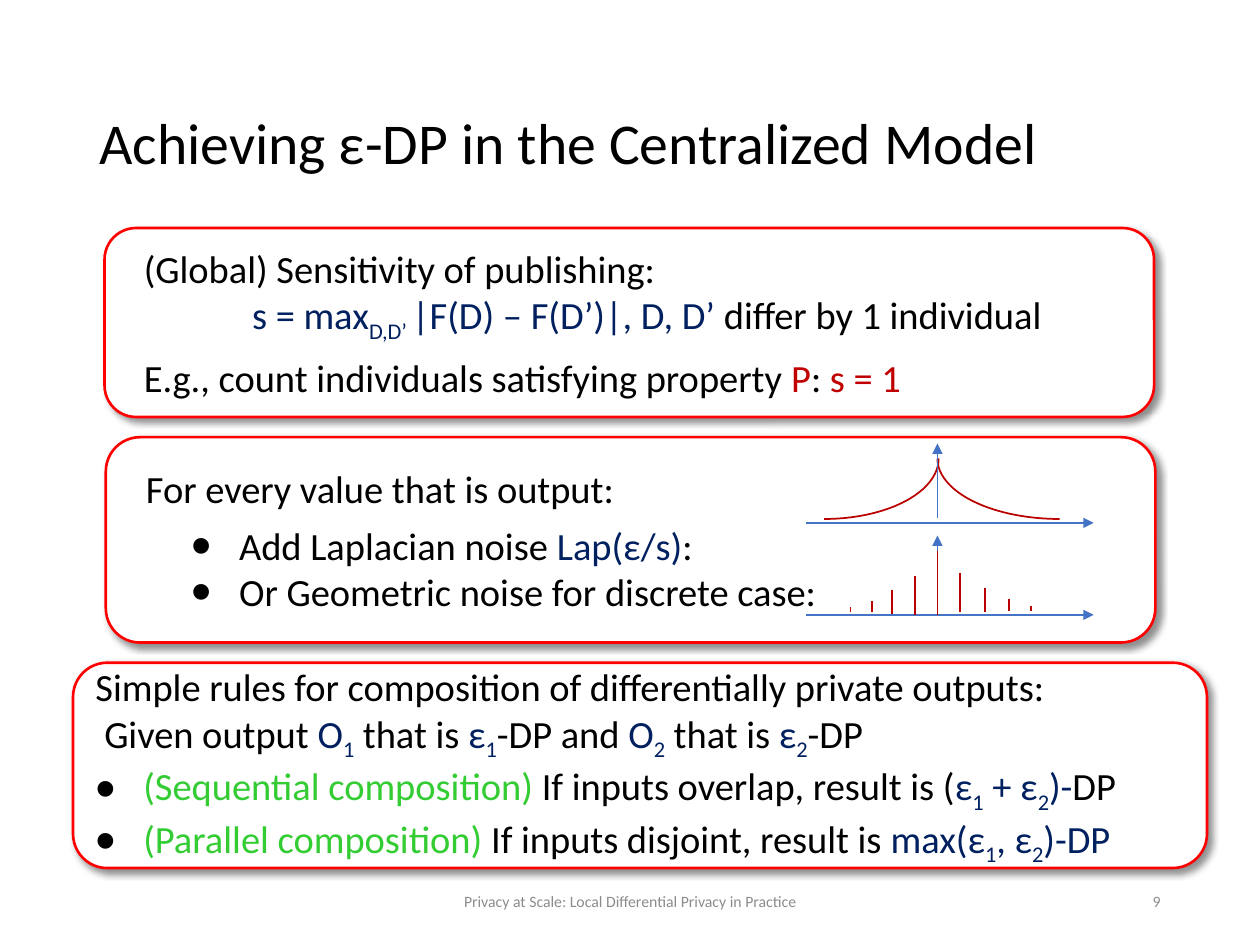
"""Build the slide on achieving differential privacy in the centralized model."""
from dataclasses import dataclass

import lxml.etree
import pptx
import pptx.dml.color
import pptx.enum.shapes
import pptx.enum.text
import pptx.oxml.ns
import pptx.util

EMU_PER_PX = 9144
FONT = "Calibri"
COLORS = {
    "black": "000000", "white": "FFFFFF", "gray": "8C8C8C", "frame": "FF0000",
    "navy": "002060", "crimson": "C00000", "green": "33CC33",
    "axis": "4472C4", "curve": "BB0000",
}
ALIGN = pptx.enum.text.PP_ALIGN
SHAPE = pptx.enum.shapes.MSO_SHAPE


@dataclass(frozen=True)
class Span:
    text: str
    color: str = "black"
    subscript: bool = False


@dataclass(frozen=True)
class Line:
    spans: tuple[Span, ...]
    margin: int = 0
    before: int = 0
    bullet: bool = False


@dataclass(frozen=True)
class Card:
    left: int
    top: int
    width: int
    height: int
    lines: tuple[Line, ...]


@dataclass(frozen=True)
class Stroke:
    start: tuple[int, int]
    end: tuple[int, int]
    color: str
    arrow: bool = False


def px(length: int) -> pptx.util.Emu:
    return pptx.util.Emu(length * EMU_PER_PX)


def rgb(name: str) -> pptx.dml.color.RGBColor:
    return pptx.dml.color.RGBColor.from_string(COLORS[name])


def add_child(parent, tag: str, **attributes: str):
    child = lxml.etree.SubElement(parent, pptx.oxml.ns.qn(tag))
    for name, value in attributes.items():
        child.set(name, value)
    return child


def add_span(para, text: str, *, size: int = 22, color: str = "black", subscript: bool = False) -> None:
    span = para.add_run()
    span.text = text
    span.font.name = FONT
    span.font.size = pptx.util.Pt(size)
    span.font.color.rgb = rgb(color)
    if subscript:
        span.font._element.set("baseline", "-25000")


def add_label(shapes, text: str, frame: tuple[int, ...], *, size: int, color: str, align) -> None:
    box = shapes.add_textbox(*map(px, frame))
    box.text_frame.word_wrap = True
    box.text_frame.vertical_anchor = pptx.enum.text.MSO_ANCHOR.MIDDLE
    para = box.text_frame.paragraphs[0]
    para.alignment = align
    add_span(para, text, size=size, color=color)


def add_line(para, line: Line) -> None:
    properties = para._p.get_or_add_pPr()
    properties.set("marL", str(px(line.margin)))
    properties.set("indent", str(px(-38 if line.bullet else 0)))
    if line.bullet:
        add_child(add_child(properties, "a:buClr"), "a:srgbClr", val=COLORS["black"])
        add_child(properties, "a:buSzPct", val="150000")
        add_child(properties, "a:buFont", typeface="Arial")
        add_child(properties, "a:buChar", char="•")
    para.alignment = ALIGN.LEFT
    if line.before:
        para.space_before = pptx.util.Pt(line.before)
    for span in line.spans:
        add_span(para, span.text, color=span.color, subscript=span.subscript)


def add_card(shapes, card: Card) -> None:
    box = shapes.add_shape(SHAPE.ROUNDED_RECTANGLE, px(card.left), px(card.top), px(card.width), px(card.height))
    box.fill.solid()
    box.fill.fore_color.rgb = rgb("white")
    box.line.color.rgb = rgb("frame")
    box.line.width = pptx.util.Pt(1.5)
    box.shadow.inherit = False
    effects = box._element.spPr.find(pptx.oxml.ns.qn("a:effectLst"))
    shadow = add_child(effects, "a:outerShdw", blurRad="50800", dist="38100", dir="2700000", algn="tl", rotWithShape="0")
    add_child(add_child(shadow, "a:srgbClr", val=COLORS["black"]), "a:alpha", val="43000")
    frame = box.text_frame
    frame.word_wrap = True
    frame.vertical_anchor = pptx.enum.text.MSO_ANCHOR.MIDDLE
    for index, line in enumerate(card.lines):
        add_line(frame.add_paragraph() if index else frame.paragraphs[0], line)


def add_curve(shapes, frame: tuple[int, ...], *, mirrored: bool) -> None:
    arc = shapes.add_shape(SHAPE.ARC, *map(px, frame))
    arc.shadow.inherit = False
    arc.fill.background()
    arc.line.color.rgb = rgb("curve")
    arc.line.width = pptx.util.Pt(1)
    arc._element.spPr.xfrm.set("flipV", "1")
    if mirrored:
        arc._element.spPr.xfrm.set("flipH", "1")


def add_stroke(shapes, stroke: Stroke) -> None:
    connector = shapes.add_connector(
        pptx.enum.shapes.MSO_CONNECTOR.STRAIGHT, *map(px, stroke.start + stroke.end))
    connector.line.color.rgb = rgb(stroke.color)
    connector.line.width = pptx.util.Pt(1)
    if stroke.arrow:
        add_child(connector.line._get_or_add_ln(), "a:tailEnd", type="triangle")
    add_child(connector._element.spPr, "a:effectLst")


def navy(text: str, subscript: bool = False) -> Span:
    return Span(text, "navy", subscript)


def indexed(symbol: str, index: int) -> tuple[Span, Span]:
    return navy(symbol), navy(str(index), True)


SENSITIVITY = Card(83, 181, 833, 150, (
    Line((Span("(Global) Sensitivity of publishing:"),), margin=14),
    Line((navy("s = max"), navy("D,D’ ", True), navy("|F(D) – F(D’)|, D, D’ "),
          Span("differ by 1 individual")), margin=100),
    Line((Span("E.g., count individuals satisfying property "), Span("P", "crimson"),
          Span(": "), Span("s = 1", "crimson")), margin=14, before=6),
))
NOISE = Card(84, 347, 833, 163, (
    Line((Span("For every value that is output:"),), margin=14),
    Line((Span("Add Laplacian noise "), navy("Lap(ε/s)"), Span(":")), margin=88, before=6, bullet=True),
    Line((Span("Or Geometric noise for discrete case:"),), margin=88, bullet=True),
))
COMPOSITION = Card(58, 526, 900, 163, (
    Line((Span("Simple rules for composition of differentially private outputs:"),)),
    Line((Span("Given output "), *indexed("O", 1), Span(" that is "), *indexed("ε", 1), Span("-DP and "),
          *indexed("O", 2), Span(" that is "), *indexed("ε", 2), Span("-DP")), margin=7),
    Line((Span("(Sequential composition) ", "green"), Span("If inputs overlap, result is ("),
          *indexed("ε", 1), *indexed(" + ε", 2), navy(")-"), Span("DP")), margin=38, bullet=True),
    Line((Span("(Parallel composition) ", "green"), Span("If inputs disjoint, result is "),
          *indexed("max(ε", 1), *indexed(", ε", 2), navy(")-DP")), margin=38, bullet=True),
))
AXES = [
    Stroke(start, end, "axis", arrow=True)
    for start, end in (((744, 411), (744, 352)), ((640, 415), (868, 415)),
                       ((744, 485), (744, 425)), ((640, 488), (868, 488)))
]
BARS = [
    Stroke((x, top), (x, bottom), "curve")
    for x, top, bottom in ((675, 482, 486), (692, 477, 486), (708, 468, 487), (726, 457, 488), (744, 437, 488),
                           (762, 455, 486), (782, 467, 486), (801, 475, 485), (818, 481, 485))
]


def main() -> None:
    deck = pptx.Presentation()
    deck.slide_width, deck.slide_height = px(1000), px(750)
    page = deck.slides.add_slide(deck.slide_layouts[6])
    add_label(page.shapes, "Achieving ε-DP in the Centralized Model", (69, 40, 862, 145),
              size=33, color="black", align=ALIGN.LEFT)
    add_label(page.shapes, "Privacy at Scale: Local Differential Privacy in Practice", (331, 695, 338, 40),
              size=9, color="gray", align=ALIGN.CENTER)
    add_label(page.shapes, "9", (706, 695, 225, 40), size=9, color="gray", align=ALIGN.RIGHT)
    add_card(page.shapes, SENSITIVITY)
    noise_group = page.shapes.add_group_shape().shapes
    add_card(noise_group, NOISE)
    add_curve(noise_group, (744, 316, 194, 96), mirrored=True)
    add_curve(noise_group, (563, 316, 182, 96), mirrored=False)
    for stroke in AXES + BARS:
        add_stroke(noise_group, stroke)
    add_card(page.shapes, COMPOSITION)
    deck.save("out.pptx")


if __name__ == "__main__":
    main()
